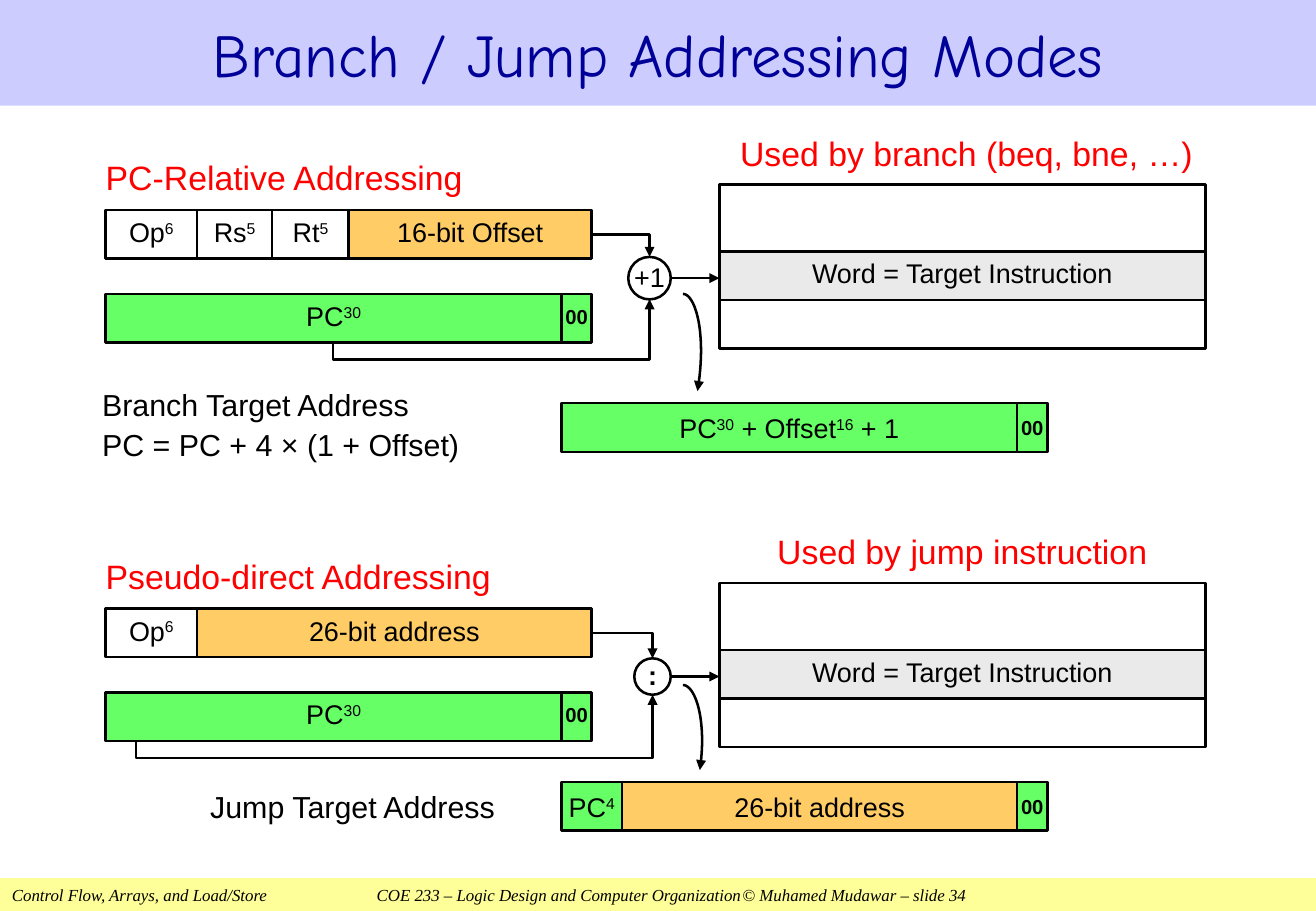
import dataclasses
from typing import Any

import lxml.etree
import pptx
import pptx.dml.color
import pptx.enum.shapes
import pptx.enum.text
import pptx.oxml.ns
import pptx.util
from pptx.util import Inches

SHAPES = pptx.enum.shapes.MSO_SHAPE
CONNECTORS = pptx.enum.shapes.MSO_CONNECTOR
ALIGN = pptx.enum.text.PP_ALIGN
MIDDLE = pptx.enum.text.MSO_ANCHOR.MIDDLE


@dataclasses.dataclass(frozen=True)
class Theme:
    ink: str = "000000"
    paper: str = "FFFFFF"
    title_ink: str = "000099"
    title_band: str = "CCCCFF"
    footer_band: str = "FFFF99"
    heading: str = "FF0000"
    register: str = "66FF66"
    immediate: str = "FFCC66"
    memory: str = "EAEAEA"
    body_font: str = "Arial"
    title_font: str = "Comic Neue"
    footer_font: str = "Times New Roman"
    title_size: float = 36
    heading_size: float = 20
    caption_size: float = 18
    field_size: float = 16
    zeros_size: float = 12
    footer_size: float = 10
    line_width: float = 1.5


THEME = Theme()


@dataclasses.dataclass(frozen=True)
class Box:
    left: float
    top: float
    width: float
    height: float


@dataclasses.dataclass(frozen=True)
class TextStyle:
    size: float
    color: str = THEME.ink
    font: str = THEME.body_font
    bold: bool = False
    italic: bool = False
    align: Any = ALIGN.CENTER
    space_before: float = 0
    line_spacing: float = 1.0
    inset: float = 0


@dataclasses.dataclass(frozen=True)
class Field:
    text: str
    width: float
    fill: str
    size: float = THEME.field_size
    bold: bool = False


@dataclasses.dataclass(frozen=True)
class AddressingMode:
    top: float
    heading: str
    usage: str
    usage_width: float
    instruction: list[Field]
    operator: str
    operator_bold: bool
    diameter: float
    pc_exit: float
    pc_bend: float
    curve_top: float
    curve_end: tuple[float, float]
    caption: str
    caption_box: Box
    target_top: float
    target: list[Field]


ROW_HEIGHT = 0.4
TIGHT = 0.85
RECORD_LEFT, RECORD_RIGHT = 0.87, 4.87
TARGET_LEFT = 4.62
MEMORY_LEFT, MEMORY_WIDTH = 5.92, 4
OPERATOR_RIGHT = 5.52
ZEROS = Field("00", 0.25, THEME.register, THEME.zeros_size, True)
OPCODE = Field("Op|6", 0.75, THEME.paper)
PROGRAM_COUNTER = [Field("PC|30", 3.75, THEME.register), ZEROS]

MODES = [
    AddressingMode(
        1.04, "PC-Relative Addressing", "Used by branch (beq, bne, …)", 4.07,
        [OPCODE, Field("Rs|5", 0.62, THEME.paper), Field("Rt|5", 0.63, THEME.paper),
         Field("16-bit Offset", 2, THEME.immediate)],
        "+1", False, 0.35, 2.74, 2.96, 2.42, (5.74, 3.22),
        "Branch Target Address\nPC = PC + 4 × (1 + Offset)", Box(0.84, 3.22, 3.72, 0.55),
        3.32, [Field("PC|30| + Offset|16| + 1", 3.75, THEME.register), ZEROS]),
    AddressingMode(
        4.32, "Pseudo-direct Addressing", "Used by jump instruction", 4,
        [OPCODE, Field("26-bit address", 3.25, THEME.immediate)],
        ":", True, 0.3, 1.12, 6.24, 5.64, (5.76, 6.34),
        "Jump Target Address", Box(1.73, 6.44, 2.83, 0.4),
        6.44, [Field("PC|4", 0.5, THEME.register),
               Field("26-bit address", 3.25, THEME.immediate), ZEROS]),
]


def rgb(color: str) -> Any:
    return pptx.dml.color.RGBColor.from_string(color)


def set_format(target: Any, values: dict[str, Any]) -> None:
    for attribute, value in values.items():
        setattr(target, attribute, value)


def write(shape: Any, text: str, style: TextStyle) -> None:
    """Fill a shape with lines of text; every second part between bars is superscript."""
    frame = shape.text_frame
    set_format(frame, {
        "word_wrap": True, "vertical_anchor": MIDDLE,
        "margin_left": Inches(style.inset), "margin_right": Inches(style.inset),
        "margin_top": 0, "margin_bottom": 0})
    for number, line in enumerate(text.split("\n")):
        paragraph = frame.add_paragraph() if number else frame.paragraphs[0]
        set_format(paragraph, {"alignment": style.align, "line_spacing": style.line_spacing,
                               "space_before": pptx.util.Pt(style.space_before)})
        for index, part in enumerate(line.split("|")):
            run = paragraph.add_run()
            run.text = part
            set_format(run.font, {"name": style.font, "size": pptx.util.Pt(style.size),
                                  "bold": style.bold, "italic": style.italic})
            run.font.color.rgb = rgb(style.color)
            if index % 2:
                run._r.get_or_add_rPr().set("baseline", "30000")


def outline(line: Any) -> None:
    line.color.rgb = rgb(THEME.ink)
    line.width = pptx.util.Pt(THEME.line_width)


def add_box(slide: Any, box: Box, fill: str | None = None, lined: bool = True,
            kind: Any = SHAPES.RECTANGLE) -> Any:
    shape = slide.shapes.add_shape(kind, *map(Inches, dataclasses.astuple(box)))
    shape.shadow.inherit = False
    if fill:
        shape.fill.solid()
        shape.fill.fore_color.rgb = rgb(fill)
    else:
        shape.fill.background()
    if lined:
        outline(shape.line)
    else:
        shape.line.fill.background()
    return shape


def add_label(slide: Any, box: Box, text: str, style: TextStyle) -> None:
    write(slide.shapes.add_textbox(*map(Inches, dataclasses.astuple(box))), text, style)


def add_record(slide: Any, left: float, top: float, fields: list[Field],
               line_spacing: float = 1.0) -> None:
    for field in fields:
        shape = add_box(slide, Box(left, top, field.width, ROW_HEIGHT), field.fill)
        write(shape, field.text,
              TextStyle(field.size, bold=field.bold, line_spacing=line_spacing))
        left += field.width


def add_arrowhead(line: Any) -> None:
    tail = lxml.etree.SubElement(line._get_or_add_ln(), pptx.oxml.ns.qn("a:tailEnd"))
    tail.set("type", "triangle")


def add_arrow(slide: Any, kind: Any, start: tuple[float, float],
              end: tuple[float, float]) -> Any:
    arrow = slide.shapes.add_connector(kind, *map(Inches, start + end))
    outline(arrow.line)
    add_arrowhead(arrow.line)
    lxml.etree.SubElement(arrow._element.spPr, pptx.oxml.ns.qn("a:effectLst"))
    return arrow


def add_corner_arrow(slide: Any, start: tuple[float, float], end: tuple[float, float]) -> None:
    arrow = add_arrow(slide, CONNECTORS.ELBOW, start, end)
    arrow._element.spPr.prstGeom.set("prst", "bentConnector2")


def add_under_arrow(slide: Any, start: tuple[float, float], end: tuple[float, float],
                    bend: float) -> None:
    """Arrow that drops from start to the bend, runs right and rises to end."""
    center_x, center_y = (start[0] + end[0]) / 2, (start[1] + end[1]) / 2
    half_rise, half_run = (start[1] - end[1]) / 2, (end[0] - start[0]) / 2
    arrow = add_arrow(slide, CONNECTORS.ELBOW,
                      (center_x + half_rise, center_y + half_run),
                      (center_x - half_rise, center_y - half_run))
    properties = arrow._element.spPr
    properties.xfrm.set("rot", "5400000")
    guide = lxml.etree.SubElement(properties.prstGeom.get_or_add_avLst(),
                                  pptx.oxml.ns.qn("a:gd"))
    ratio = (start[1] - bend) / (2 * half_rise)
    guide.set("name", "adj1")
    guide.set("fmla", f"val {round(ratio * 100000)}")


def add_curve(slide: Any, top: float, end: tuple[float, float], steps: int = 24) -> None:
    """Curved arrow sampled from one cubic Bézier."""
    controls = [(5.62, top), (5.72, top), (5.82, top + 0.4 * (end[1] - top)), end]
    points = []
    for step in range(steps + 1):
        t = step / steps
        weights = ((1 - t) ** 3, 3 * t * (1 - t) ** 2, 3 * t * t * (1 - t), t ** 3)
        points.append(tuple(Inches(sum(w * point[axis] for w, point in zip(weights, controls)))
                            for axis in (0, 1)))
    builder = slide.shapes.build_freeform(*points[0])
    builder.add_line_segments(points[1:], close=False)
    curve = builder.convert_to_shape()
    curve.shadow.inherit = False
    curve.fill.background()
    outline(curve.line)
    add_arrowhead(curve.line)


def add_mode(slide: Any, mode: AddressingMode) -> None:
    top = mode.top
    heading = TextStyle(THEME.heading_size, THEME.heading)
    add_label(slide, Box(MEMORY_LEFT, top, mode.usage_width, 0.44), mode.usage, heading)
    add_label(slide, Box(RECORD_LEFT, top + 0.19, 4, 0.46), mode.heading,
              dataclasses.replace(heading, align=ALIGN.LEFT))
    word = add_box(slide, Box(MEMORY_LEFT, top + 1.03, MEMORY_WIDTH, ROW_HEIGHT), THEME.memory)
    write(word, "Word = Target Instruction", TextStyle(THEME.field_size, line_spacing=TIGHT))
    add_box(slide, Box(MEMORY_LEFT, top + 0.48, MEMORY_WIDTH, 1.35))
    add_record(slide, RECORD_LEFT, top + 0.69, mode.instruction, TIGHT)
    add_record(slide, RECORD_LEFT, top + 1.38, PROGRAM_COUNTER, TIGHT)

    radius = mode.diameter / 2
    center_x, center_y = OPERATOR_RIGHT - radius, top + 1.25
    circle = Box(center_x - radius, center_y - radius, mode.diameter, mode.diameter)
    symbol = add_box(slide, dataclasses.replace(circle, height=mode.diameter - 0.03),
                     THEME.paper, lined=False)
    write(symbol, mode.operator, TextStyle(THEME.field_size, bold=mode.operator_bold))
    add_box(slide, circle, kind=SHAPES.OVAL)

    add_corner_arrow(slide, (RECORD_RIGHT, top + 0.89), (center_x, center_y - radius))
    add_under_arrow(slide, (mode.pc_exit, top + 1.78), (center_x, center_y + radius),
                    mode.pc_bend)
    add_arrow(slide, CONNECTORS.STRAIGHT, (OPERATOR_RIGHT, center_y), (MEMORY_LEFT, center_y))
    add_curve(slide, mode.curve_top, mode.curve_end)
    add_label(slide, mode.caption_box, mode.caption,
              TextStyle(THEME.caption_size, align=ALIGN.LEFT, space_before=2))
    add_record(slide, TARGET_LEFT, mode.target_top, mode.target)


def add_footer(slide: Any) -> None:
    band = add_box(slide, Box(0, 7.23, 10.83, 0.27), THEME.footer_band, lined=False)
    write(band, "Control Flow, Arrays, and Load/Store\tCOE 233 – Logic Design and Computer "
          "Organization\t© Muhamed Mudawar – slide 34",
          TextStyle(THEME.footer_size, font=THEME.footer_font, italic=True,
                    align=ALIGN.LEFT, inset=0.1))
    properties = band.text_frame.paragraphs[0]._p.get_or_add_pPr()
    stops = lxml.etree.SubElement(properties, pptx.oxml.ns.qn("a:tabLst"))
    for position, align in ((4.5, "ctr"), (7.85, "r")):
        stop = lxml.etree.SubElement(stops, pptx.oxml.ns.qn("a:tab"))
        stop.set("pos", str(Inches(position)))
        stop.set("algn", align)


def add_title(slide: Any) -> None:
    title = slide.shapes.title
    set_format(title, {"left": 0, "top": 0, "width": Inches(10.83), "height": Inches(0.87)})
    title.fill.solid()
    title.fill.fore_color.rgb = rgb(THEME.title_band)
    write(title, "Branch / Jump Addressing Modes",
          TextStyle(THEME.title_size, THEME.title_ink, THEME.title_font))


def main() -> None:
    presentation = pptx.Presentation()
    set_format(presentation, {"slide_width": Inches(10.83), "slide_height": Inches(7.5)})
    slide = presentation.slides.add_slide(presentation.slide_layouts[5])
    add_footer(slide)
    add_title(slide)
    for mode in MODES:
        add_mode(slide, mode)
    presentation.save("out.pptx")


if __name__ == "__main__":
    main()
